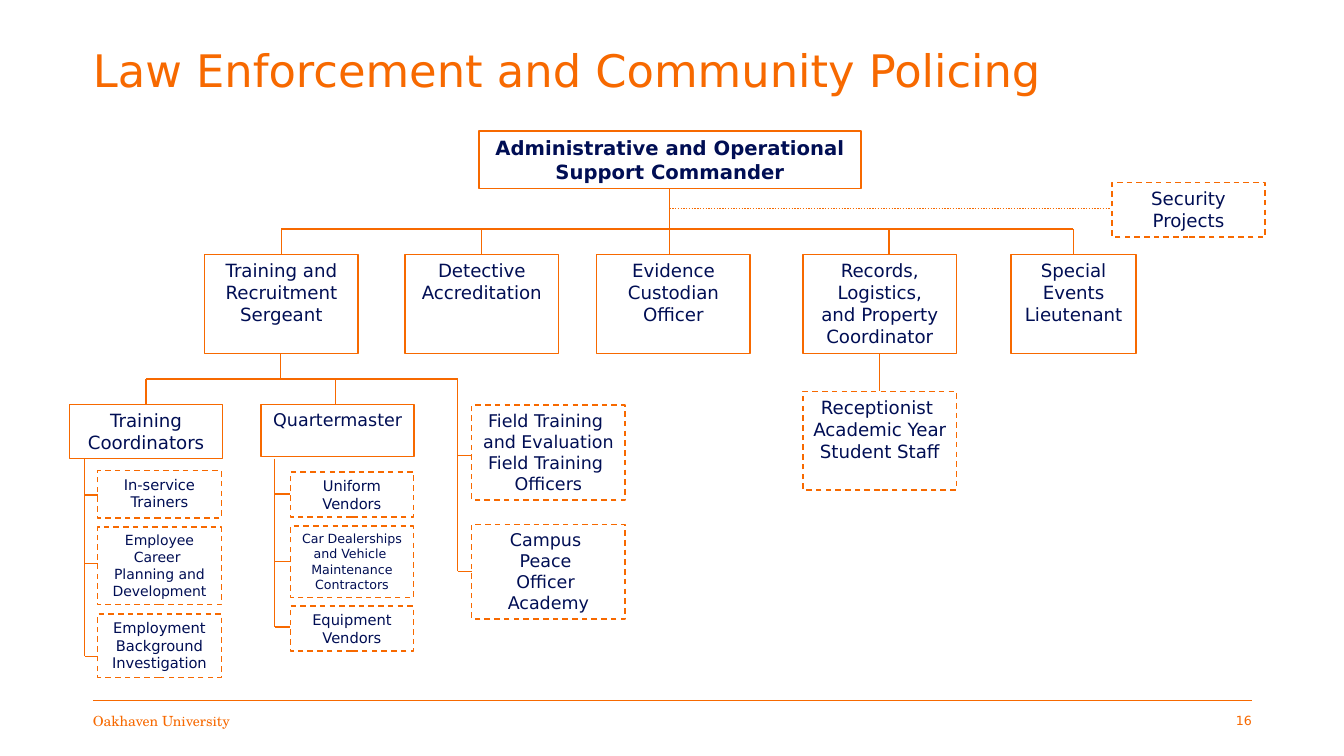
from dataclasses import dataclass
from lxml import etree
from pptx import Presentation
from pptx import util as u
from pptx.dml import color
from pptx.enum import dml, shapes, text
from pptx.oxml import ns


@dataclass(frozen=True)
class Theme:
    flame: color.RGBColor = color.RGBColor(0xF7, 0x69, 0x00)
    navy: color.RGBColor = color.RGBColor(0x00, 0x0E, 0x54)
    sans: str = "DejaVu Sans"
    serif: str = "TeX Gyre Schola"
    title: float = 32
    chief: float = 14
    unit: float = 13
    team: float = 12.5
    task: float = 10.5
    tight: float = 10
    small: float = 9
    foot: float = 10
    rule: float = 1
    hair: float = 0.5


THEME = Theme()
ALIGN = text.PP_ALIGN
DASH = dml.MSO_LINE.DASH
DOT = dml.MSO_LINE.ROUND_DOT


def apply(item, values):
    for name, value in values.items():
        setattr(item, name, value)


def place(box):
    return [u.Cm(side) for side in box]


def write(frame, words, size, tint, face=THEME.sans, bold=False,
          align=ALIGN.CENTER, **look):
    apply(frame, {"word_wrap": True, "auto_size": text.MSO_AUTO_SIZE.NONE, **look})
    for i, line in enumerate(words.split("\n")):
        para = frame.paragraphs[0] if i == 0 else frame.add_paragraph()
        para.alignment = align
        run = para.add_run()
        run.text = line
        apply(run.font, {"size": u.Pt(size), "name": face, "bold": bold})
        run.font.color.rgb = tint


def stroke(line, width=THEME.rule, dash=None):
    line.color.rgb = THEME.flame
    apply(line, {"width": u.Pt(width), "dash_style": dash})


def link(slide, x1, y1, x2, y2, width=THEME.rule, dash=None):
    wire = slide.shapes.add_connector(
        shapes.MSO_CONNECTOR.STRAIGHT, *place((x1, y1, x2, y2)))
    stroke(wire.line, width, dash)
    etree.SubElement(wire._element.spPr, ns.qn("a:effectLst"))


def card(slide, box, words, size=THEME.unit, dash=None, bold=False):
    rect = slide.shapes.add_shape(shapes.MSO_SHAPE.RECTANGLE, *place(box))
    rect.shadow.inherit = False
    rect.fill.background()
    stroke(rect.line, dash=dash)
    write(rect.text_frame, words, size, THEME.navy, bold=bold,
          vertical_anchor=text.MSO_ANCHOR.TOP)


def header(slide, box, words):
    title = slide.shapes.title
    apply(title, dict(zip(("left", "top", "width", "height"), place(box))))
    write(title.text_frame, words, THEME.title, THEME.flame, align=ALIGN.LEFT,
          vertical_anchor=text.MSO_ANCHOR.MIDDLE, margin_left=0, margin_right=0)
    title.text_frame.paragraphs[0].line_spacing = 0.9


def footer(slide, box, name, page):
    left, top, width, height = box
    link(slide, left, top, left + width, top, THEME.hair)
    half = width / 2
    for x, words, size, face, align in (
            (left, name, THEME.foot, THEME.serif, ALIGN.LEFT),
            (left + half, page, THEME.small, THEME.sans, ALIGN.RIGHT)):
        label = slide.shapes.add_textbox(*place((x, top, half, height)))
        write(label.text_frame, words, size, THEME.flame, face, align=align,
              vertical_anchor=text.MSO_ANCHOR.MIDDLE, margin_left=0, margin_right=0)


def command(slide, box):
    left, top, width, height = box
    stem, bar, row = left + 11.71, top + 2.47, top + 3.12
    card(slide, (left + 6.91, top, 9.63, 1.45),
         "Administrative and Operational Support Commander", THEME.chief, bold=True)
    link(slide, stem, top + 1.45, stem, bar)
    link(slide, stem, top + 1.96, left + 22.81, top + 1.96, dash=DOT)
    card(slide, (left + width - 3.86, top + 1.3, 3.86, 1.37),
         "Security Projects", dash=DASH)
    units = (
        (0, 1.93, 3.86, "Training and Recruitment Sergeant"),
        (5.05, 6.98, 3.86, "Detective\nAccreditation"),
        (9.88, 11.71, 3.86, "Evidence\nCustodian\nOfficer"),
        (15.08, 17.24, 3.86, "Records, Logistics,\nand Property\nCoordinator"),
        (20.32, 21.89, 3.15, "Special Events\nLieutenant"),
    )
    link(slide, left + units[0][1], bar, left + units[-1][1], bar)
    for x, drop, wide, words in units:
        link(slide, left + drop, bar, left + drop, row)
        card(slide, (left + x, row, wide, 2.49), words)
    desk = left + 17.01
    link(slide, desk, row + 2.49, desk, top + height - 2.49)
    card(slide, (left + 15.08, top + height - 2.49, 3.86, 2.49),
         "Receptionist \nAcademic Year\nStudent Staff", dash=DASH)


def branch(slide, box, gap, tasks):
    left, top, width, height = box
    link(slide, left, top, left, top + height)
    for y, tall, tick, words, size in tasks:
        link(slide, left, top + tick, left + gap, top + tick)
        card(slide, (left + gap, top + y, width - gap, tall), words, size, DASH)


def training(slide, box):
    left, top, width, height = box
    bar, row = top + 0.63, top + 1.27
    heads = ((0, 1.93, 1.37, "Training Coordinators", THEME.unit),
             (4.83, 6.71, 1.32, "Quartermaster", THEME.team))
    link(slide, left + 5.32, top, left + 5.32, bar)
    link(slide, left + 1.93, bar, left + 9.78, bar)
    for x, drop, tall, words, size in heads:
        link(slide, left + drop, bar, left + drop, row)
        card(slide, (left + x, row, 3.86, tall), words, size)
    base = row + 1.37
    branch(slide, (left + 0.38, base, 3.45, 4.98), 0.33, (
        (0.3, 1.19, 0.91, "In-service Trainers", THEME.task),
        (1.72, 1.96, 2.64, "Employee Career \nPlanning and\nDevelopment", THEME.tight),
        (3.91, 1.6, 4.98, "Employment\nBackground\nInvestigation", THEME.task)))
    branch(slide, (left + 5.17, base, 3.5, 4.24), 0.4, (
        (0.33, 1.14, 0.89, "Uniform Vendors", THEME.task),
        (1.7, 1.8, 2.59,
         "Car Dealerships and Vehicle \nMaintenance\nContractors", THEME.small),
        (3.71, 1.14, 4.24, "Equipment Vendors", THEME.task)))
    branch(slide, (left + 9.78, bar, width - 9.78, 4.85), 0.36, (
        (0.66, 2.39, 1.93,
         "Field Training \nand Evaluation\nField Training \nOfficers", THEME.team),
        (3.66, 2.39, 4.85, "Campus \nPeace \nOfficer \nAcademy", THEME.team)))


def main():
    deck = Presentation()
    apply(deck, {"slide_width": u.Cm(33.87), "slide_height": u.Cm(19.05)})
    slide = deck.slides.add_slide(deck.slide_layouts[5])
    header(slide, (2.34, 0, 29.21, 3.68), "Law Enforcement and Community Policing")
    command(slide, (5.16, 3.3, 26.72, 9.05))
    training(slide, (1.75, 8.92, 14, 8.15))
    footer(slide, (2.34, 17.65, 29.21, 1.02), "Oakhaven University", "16")
    deck.save("out.pptx")


if __name__ == "__main__":
    main()
